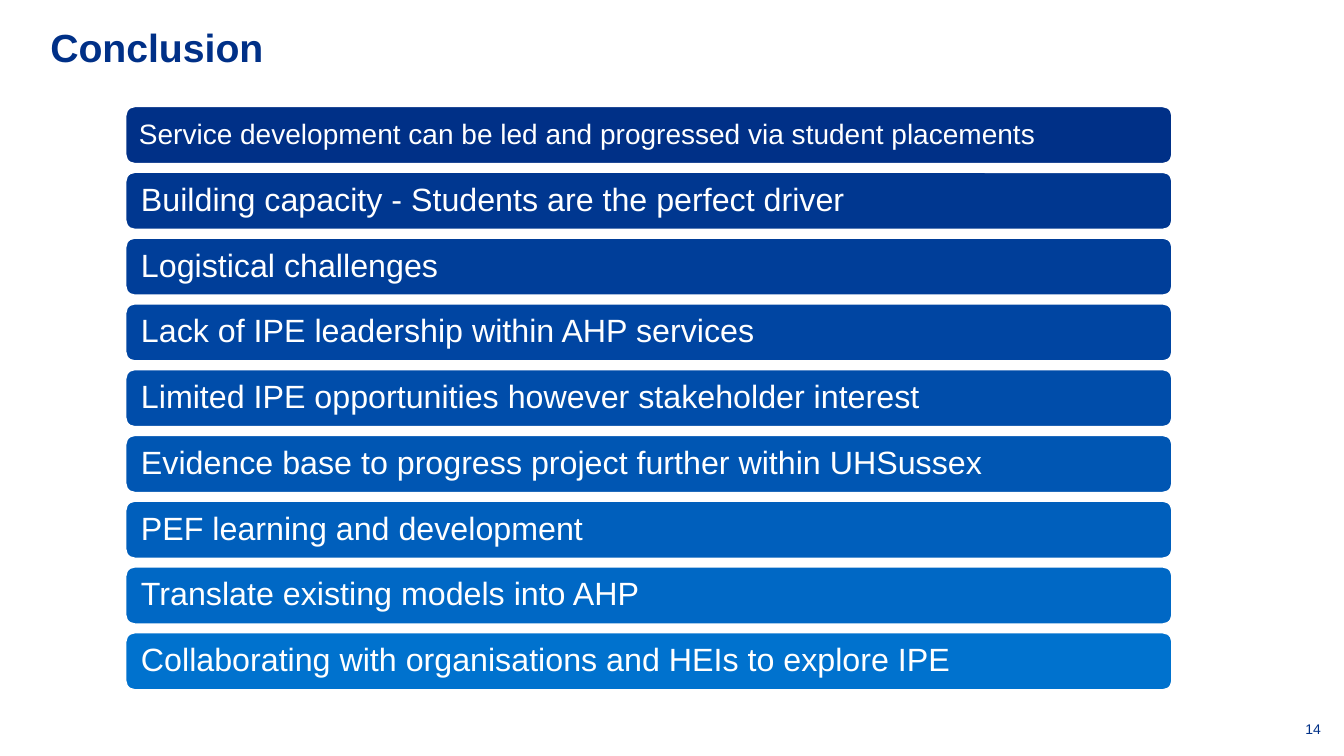
from pptx import Presentation
from pptx.dml.color import RGBColor
from pptx.enum.shapes import MSO_SHAPE as Shape
from pptx.enum.text import MSO_ANCHOR as Anchor, PP_ALIGN as Align
from pptx.util import Inches, Pt

NAVY, WHITE = "003087", "FFFFFF"
CONCLUSIONS = [
    ("Service development can be led and progressed via student placements", "003087"),
    ("Building capacity - Students are the perfect driver", "003790"),
    ("Logistical challenges", "003E99"),
    ("Lack of IPE leadership within AHP services", "0045A2"),
    ("Limited IPE opportunities however stakeholder interest", "004DAA"),
    ("Evidence base to progress project further within UHSussex", "0056B3"),
    ("PEF learning and development", "005FBC"),
    ("Translate existing models into AHP", "0068C5"),
    ("Collaborating with organisations and HEIs to explore IPE", "0072CE"),
]


def color(hex_code):
    return RGBColor.from_string(hex_code)


def apply(target, formats):
    for name, value in formats.items():
        setattr(target, name, value)


def write(holder, words, size, hex_code, frame=None, paragraph=None, bold=False):
    text = holder.text_frame
    apply(text, {"word_wrap": True, **(frame or {})})
    line = text.paragraphs[0]
    line.text = words
    apply(line, {"alignment": Align.LEFT, **(paragraph or {})})
    apply(line.font, {"name": "Arial", "size": Pt(size), "bold": bold})
    line.font.color.rgb = color(hex_code)


def add_title(slide, left, top, width, height):
    title = slide.shapes.add_textbox(
        Inches(left), Inches(top), Inches(width), Inches(height))
    write(title, "Conclusion", 28, NAVY,
          frame={"vertical_anchor": Anchor.BOTTOM}, bold=True)


def add_conclusions(slide, left, top, width, height):
    bar_height = 0.58
    pitch = (height - bar_height) / (len(CONCLUSIONS) - 1)
    for index, (conclusion, fill) in enumerate(CONCLUSIONS):
        bar = slide.shapes.add_shape(
            Shape.ROUNDED_RECTANGLE, Inches(left), Inches(top + index * pitch),
            Inches(width), Inches(bar_height))
        bar.shadow.inherit = False
        bar.fill.solid()
        bar.fill.fore_color.rgb = color(fill)
        bar.line.color.rgb = color(WHITE)
        bar.line.width = Pt(2)
        size, inset = (20, 0.11) if index == 0 else (23, 0.13)
        write(bar, conclusion, size, WHITE,
              frame={"vertical_anchor": Anchor.MIDDLE,
                     "margin_left": Inches(inset), "margin_right": Inches(inset),
                     "margin_top": 0, "margin_bottom": 0},
              paragraph={"line_spacing": 0.9})


def add_page_number(slide, left, top, width, height):
    page_number = slide.shapes.add_textbox(
        Inches(left), Inches(top), Inches(width), Inches(height))
    write(page_number, "14", 10, NAVY,
          paragraph={"alignment": Align.RIGHT, "space_after": Pt(6)})


def main():
    deck = Presentation()
    apply(deck, {"slide_width": Inches(13.33), "slide_height": Inches(7.5)})
    slide = deck.slides.add_slide(deck.slide_layouts[6])
    add_title(slide, 0.4, 0, 4.48, 0.75)
    add_conclusions(slide, 1.24, 1.05, 10.39, 5.8)
    add_page_number(slide, 12.67, 7.1, 0.53, 0.4)
    deck.save("out.pptx")


if __name__ == "__main__":
    main()
